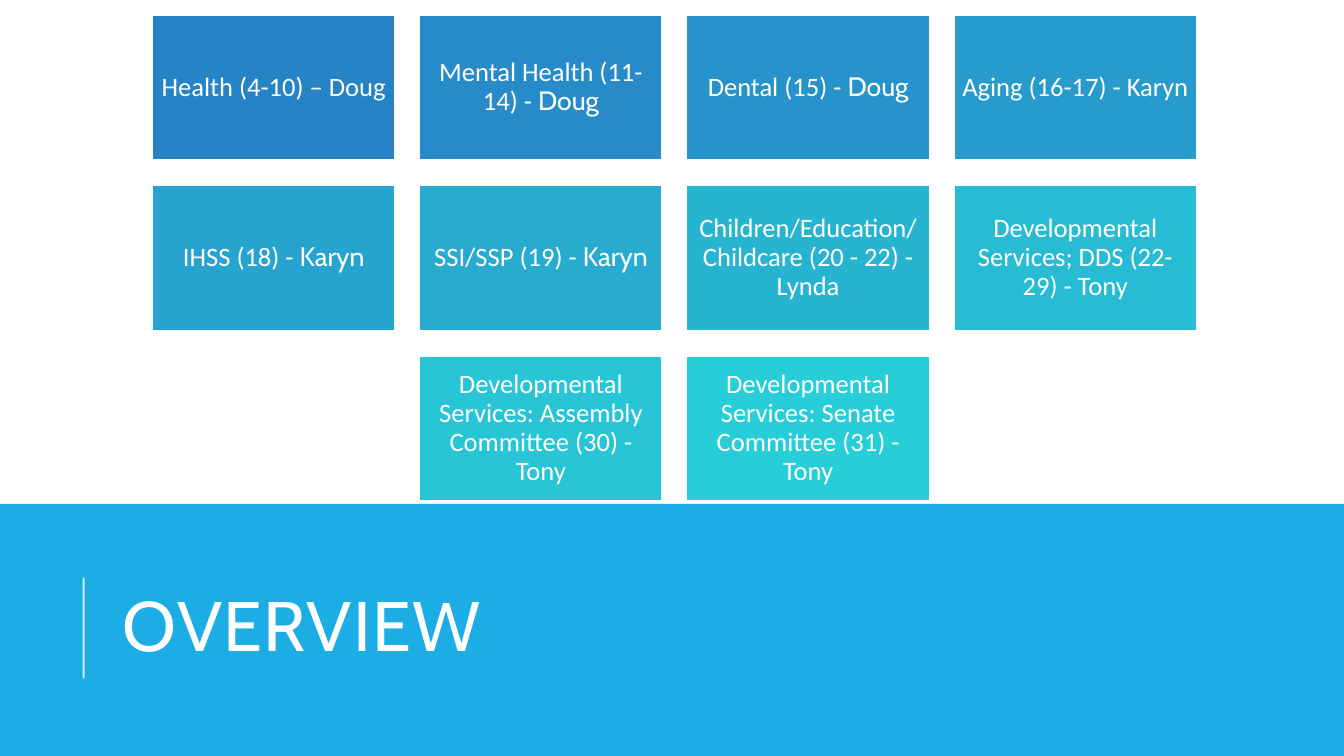
import pptx
import pptx.util
import pptx.dml.color
import pptx.enum.shapes
import pptx.enum.text
import pptx.oxml.ns
from lxml import etree

Inches, Pt = pptx.util.Inches, pptx.util.Pt
RGB = pptx.dml.color.RGBColor
SHAPE = pptx.enum.shapes.MSO_SHAPE
ALIGN = pptx.enum.text.PP_ALIGN
qn = pptx.oxml.ns.qn

WHITE = RGB(0xFF, 0xFF, 0xFF)
BAND_BLUE = RGB(0x1C, 0xAD, 0xE4)
BODY_FONT, TITLE_FONT = "Calibri", "Cabin"

TITLE = "OVERVIEW"
# Each tile: topic, presenter set in the title font, fill
ROWS = [
    [("Health (4-10) – Doug ", "", RGB(0x26, 0x83, 0xC6)),
     ("Mental Health (11-14) - ", "Doug", RGB(0x26, 0x8B, 0xC8)),
     ("Dental (15) - ", "Doug", RGB(0x26, 0x93, 0xCA)),
     ("Aging (16-17) - Karyn", "", RGB(0x26, 0x9B, 0xCC))],
    [("IHSS (18) - ", "Karyn", RGB(0x26, 0xA3, 0xCE)),
     ("SSI/SSP (19) - ", "Karyn", RGB(0x27, 0xAB, 0xCF)),
     ("Children/Education/ Childcare (20 - 22) - Lynda", "", RGB(0x27, 0xB4, 0xD1)),
     ("Developmental Services; DDS (22-29) - Tony", "", RGB(0x27, 0xBC, 0xD3))],
    [("Developmental Services: Assembly Committee (30) - Tony", "", RGB(0x27, 0xC5, 0xD5)),
     ("Developmental Services: Senate Committee (31) - Tony", "", RGB(0x27, 0xCE, 0xD7))],
]

SLIDE_W, SLIDE_H = 13.33, 7.5
BAND_TOP = SLIDE_H * 2 / 3
GRID_LEFT, GRID_TOP, COLUMNS = 1.51, 0.15, 4
TILE_W, TILE_H = 2.41, 1.44
STEP_X, STEP_Y = 2.65, 1.69
RULE_X, RULE_TOP, RULE_BOTTOM = 0.83, 5.73, 6.73


def add_text(sp, runs, size, align=ALIGN.LEFT, line_spacing=1.0, inset=None, tracking=None):
    """Fill a shape with one white paragraph made of (text, font) runs."""
    tf = sp.text_frame
    tf.word_wrap = True
    tf.vertical_anchor = pptx.enum.text.MSO_ANCHOR.MIDDLE
    if inset is not None:
        tf.margin_left = tf.margin_right = tf.margin_top = tf.margin_bottom = Inches(inset)
    p = tf.paragraphs[0]
    p.alignment, p.line_spacing = align, line_spacing
    for text, font in runs:
        r = p.add_run()
        r.text = text
        r.font.name, r.font.size = font, Pt(size)
        r.font.color.rgb = WHITE
        if tracking:
            r.font._element.set("spc", str(tracking * 100))


def add_block(s, left, top, width, height, fill, outline=None):
    sp = s.shapes.add_shape(SHAPE.RECTANGLE, Inches(left), Inches(top),
                            Inches(width), Inches(height))
    sp.shadow.inherit = False
    sp.fill.solid()
    sp.fill.fore_color.rgb = fill
    if outline is None:
        sp.line.fill.background()
    else:
        sp.line.color.rgb, sp.line.width = outline, Pt(1.25)
    return sp


def add_title(s):
    add_block(s, 0, BAND_TOP, SLIDE_W, SLIDE_H - BAND_TOP, BAND_BLUE)
    box = s.shapes.add_textbox(Inches(1.12), Inches(5.44), Inches(10.63), Inches(1.64))
    add_text(box, [(TITLE, TITLE_FONT)], 50, line_spacing=0.8, tracking=1)

    rule = s.shapes.add_connector(pptx.enum.shapes.MSO_CONNECTOR.STRAIGHT, Inches(RULE_X),
                                  Inches(RULE_BOTTOM), Inches(RULE_X), Inches(RULE_TOP))
    rule.line.color.rgb, rule.line.width = WHITE, Pt(1.5)
    spPr = rule._element.spPr
    colour = spPr.find(".//" + qn("a:srgbClr"))
    etree.SubElement(colour, qn("a:alpha")).set("val", "80000")
    etree.SubElement(spPr, qn("a:effectLst"))


def add_tiles(s):
    for row, tiles in enumerate(ROWS):
        first_column = (COLUMNS - len(tiles)) / 2  # centres a short row
        for i, (topic, presenter, fill) in enumerate(tiles):
            sp = add_block(s, GRID_LEFT + (first_column + i) * STEP_X,
                           GRID_TOP + row * STEP_Y, TILE_W, TILE_H, fill, WHITE)
            runs = [(topic, BODY_FONT)]
            if presenter:
                runs.append((presenter, TITLE_FONT))
            add_text(sp, runs, 19, align=ALIGN.CENTER, line_spacing=0.9, inset=0.08)


def main():
    prs = pptx.Presentation()
    prs.slide_width, prs.slide_height = Inches(SLIDE_W), Inches(SLIDE_H)
    s = prs.slides.add_slide(prs.slide_layouts[6])
    add_title(s)
    add_tiles(s)
    prs.save("out.pptx")


if __name__ == "__main__":
    main()
